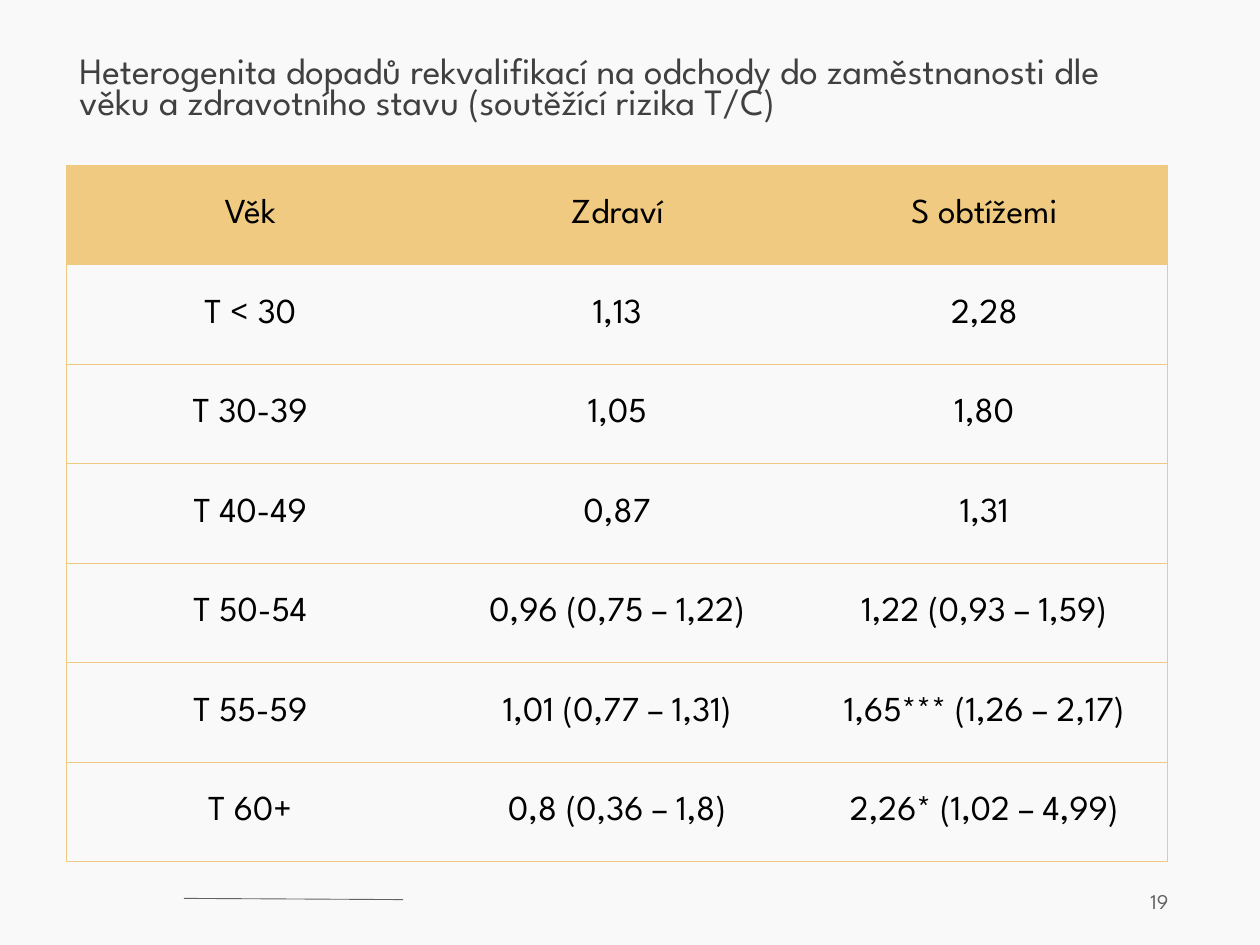
import pptx
import pptx.util
import pptx.dml.color
import pptx.enum.shapes
import pptx.enum.text
import pptx.oxml
import pptx.oxml.ns

Inches, Pt = pptx.util.Inches, pptx.util.Pt
RGBColor = pptx.dml.color.RGBColor
Align = pptx.enum.text.PP_ALIGN
Anchor = pptx.enum.text.MSO_ANCHOR

# Content
TITLE = ("Heterogenita dopadů rekvalifikací na odchody do zaměstnanosti dle "
         "věku a zdravotního stavu (soutěžící rizika T/C)")
ROWS = [
    ("Věk", "Zdraví", "S obtížemi"),
    ("T < 30", "1,13", "2,28"),
    ("T 30-39", "1,05", "1,80"),
    ("T 40-49", "0,87", "1,31"),
    ("T 50-54", "0,96 (0,75 – 1,22)", "1,22 (0,93 – 1,59)"),
    ("T 55-59", "1,01 (0,77 – 1,31)", "1,65*** (1,26 – 2,17)"),
    ("T 60+", "0,8 (0,36 – 1,8)", "2,26* (1,02 – 4,99)"),
]
PAGE_NUMBER = "19"

# Format
FONT = "League Spartan"
BACKGROUND = RGBColor(0xF9, 0xF9, 0xF9)
GOLD = RGBColor(0xF0, 0xCA, 0x81)
GREY = RGBColor(0x63, 0x63, 0x63)
DARK = RGBColor(0x40, 0x40, 0x40)
BLACK = RGBColor(0, 0, 0)

# Layout in inches
TABLE_LEFT, TABLE_TOP, TABLE_WIDTH, TABLE_HEIGHT = 0.53, 1.31, 8.74, 5.53


def write_text(frame, text, size, color, align=Align.LEFT, spacing=None):
    frame.word_wrap = True
    paragraph = frame.paragraphs[0]
    paragraph.alignment = align
    if spacing:
        paragraph.line_spacing = spacing
    run = paragraph.add_run()
    run.text = text
    run.font.name = FONT
    run.font.size = Pt(size)
    run.font.bold = False
    run.font.color.rgb = color


def set_borders(cell, visible_sides):
    properties = cell._tc.get_or_add_tcPr()
    for index, side in enumerate("LRTB"):
        paint = (f'<a:solidFill><a:srgbClr val="{GOLD}"/></a:solidFill>'
                 if side in visible_sides else "<a:noFill/>")
        properties.insert(index, pptx.oxml.parse_xml(
            f'<a:ln{side} {pptx.oxml.ns.nsdecls("a")} w="{Pt(0.5)}">{paint}</a:ln{side}>'))


presentation = pptx.Presentation()
presentation.slide_width, presentation.slide_height = Inches(10), Inches(7.5)
slide = presentation.slides.add_slide(presentation.slide_layouts[5])
slide.background.fill.solid()
slide.background.fill.fore_color.rgb = BACKGROUND

# Footer line
line = slide.shapes.add_connector(
    pptx.enum.shapes.MSO_CONNECTOR.STRAIGHT,
    Inches(1.46), Inches(7.13), Inches(3.2), Inches(7.14))
line.line.color.rgb = GREY
line.line.width = Pt(0.5)
line._element.spPr.append(
    pptx.oxml.parse_xml(f'<a:effectLst {pptx.oxml.ns.nsdecls("a")}/>'))

# Page number
number = slide.shapes.add_textbox(Inches(7.12), Inches(6.95), Inches(2.25), Inches(0.4))
number.text_frame.vertical_anchor = Anchor.MIDDLE
write_text(number.text_frame, PAGE_NUMBER, 12, GREY, align=Align.RIGHT)

# Title
title = slide.shapes.title
title.left, title.top = Inches(0.63), Inches(0.47)
title.width, title.height = Inches(8.74), Inches(0.74)
frame = title.text_frame
frame.margin_left = frame.margin_right = frame.margin_top = frame.margin_bottom = 0
frame.vertical_anchor = Anchor.TOP
frame.auto_size = pptx.enum.text.MSO_AUTO_SIZE.NONE
write_text(frame, TITLE, 21.2, DARK, spacing=0.7)

# Table
last_row, last_column = len(ROWS) - 1, len(ROWS[0]) - 1
table = slide.shapes.add_table(
    len(ROWS), len(ROWS[0]), Inches(TABLE_LEFT), Inches(TABLE_TOP),
    Inches(TABLE_WIDTH), Inches(TABLE_HEIGHT)).table
table.first_row = table.horz_banding = False

for row_index, row in enumerate(ROWS):
    for column_index, text in enumerate(row):
        cell = table.cell(row_index, column_index)
        cell.margin_left = cell.margin_right = cell.margin_top = Inches(0.01)
        cell.margin_bottom = 0
        cell.vertical_anchor = Anchor.MIDDLE
        if row_index == 0:
            cell.fill.solid()
            cell.fill.fore_color.rgb = GOLD
        else:
            cell.fill.background()
        sides = "TB"
        if column_index == 0:
            sides += "L"
        if column_index == last_column:
            sides += "R"
        set_borders(cell, sides)
        write_text(cell.text_frame, text, 20, BLACK, align=Align.CENTER)

presentation.save("out.pptx")
